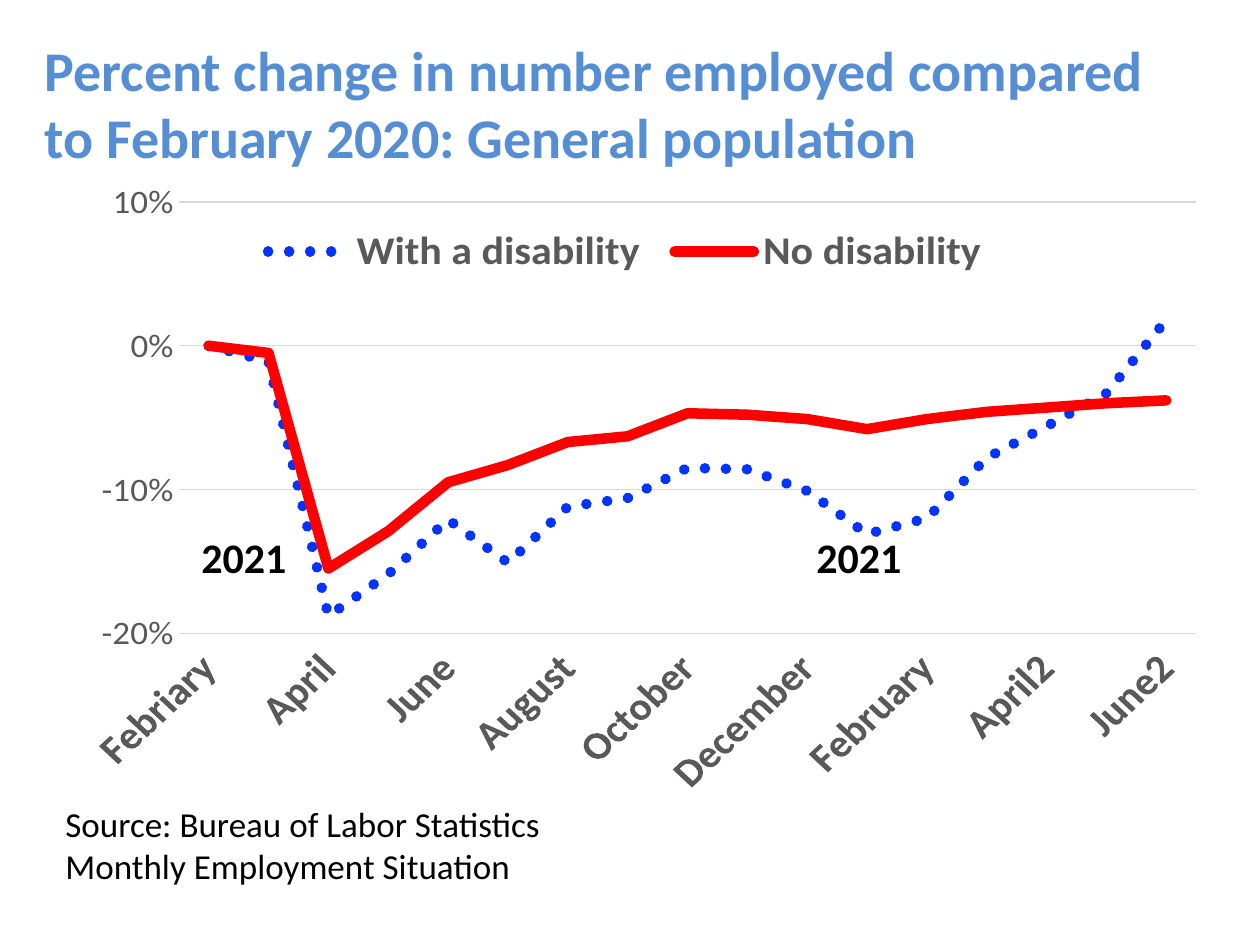
import pptx
import pptx.util
import pptx.dml.color
import pptx.chart.data
import pptx.enum.chart
import pptx.enum.dml
import pptx.enum.text
import pptx.oxml

# Content: lengths in px, text sizes in points
COLORS = {"title": "558ED5", "text": "000000", "label": "595959", "grid": "D9D9D9",
          "disability": "0432FF", "none": "FF0000"}
TEXTS = [
    {"lines": ["Percent change in number employed compared to February 2020: General population"],
     "at": (32, 32, 1166, 141), "anchor": "MIDDLE", "size": 32, "bold": True, "color": "title"},
    {"lines": ["Source: Bureau of Labor Statistics", "Monthly Employment Situation"],
     "at": (53, 796, 892, 97), "anchor": "TOP", "size": 20, "bold": False, "color": "text"},
] + [
    {"lines": ["2021"], "at": (left, 525, 136, 63), "anchor": "TOP",
     "size": 24, "bold": True, "color": "text"}
    for left in (804, 189)
]
MONTHS = ["Febriary", "March", "April", "May", "June", "July", "August", "September",
          "October", "November", "December", "January", "February", "March2", "April2",
          "May2", "June2"]
SERIES = [
    ("With a disability", "disability", "ROUND_DOT",
     [0, -0.011, -0.188, -0.159, -0.121, -0.151, -0.112, -0.106, -0.085, -0.086,
      -0.101, -0.131, -0.12, -0.078, -0.056, -0.033, 0.018]),
    ("No disability", "none", None,
     [0, -0.005, -0.155, -0.129, -0.095, -0.083, -0.067, -0.063, -0.047, -0.048,
      -0.051, -0.058, -0.051, -0.046, -0.043, -0.04, -0.038]),
]
CHART_AT = (53, 173, 1144, 624)
PLOT_AREA = (0.11, 0.05, 0.89, 0.74)  # shares of the chart
LEGEND_AREA = (0.17, 0.09, 0.66, 0.09)
FONT = "Calibri"


def px(length):
    return pptx.util.Emu(length * 914400 // 126)


def rgb(name):
    return pptx.dml.color.RGBColor.from_string(COLORS[name])


def set_font(font, size, bold, color):
    values = {"name": FONT, "size": pptx.util.Pt(size), "bold": bold}
    for key, value in values.items():
        setattr(font, key, value)
    font.color.rgb = rgb(color)


def set_line(line, color, width):
    line.color.rgb = rgb(color)
    line.width = pptx.util.Pt(width)


def chart_xml(body):
    uri = "http://schemas.openxmlformats.org/drawingml/2006/chart"
    return pptx.oxml.parse_xml(body.replace(">", f' xmlns:c="{uri}">', 1))


def manual_layout(area, inner=False):
    parts = '<c:layoutTarget val="inner"/>' if inner else ""
    parts += '<c:xMode val="edge"/><c:yMode val="edge"/>'
    parts += "".join(f'<c:{key} val="{share}"/>' for key, share in zip("xywh", area))
    return chart_xml(f"<c:layout><c:manualLayout>{parts}</c:manualLayout></c:layout>")


def drop_layout(parent):
    for layout in parent.xpath("./c:layout"):
        parent.remove(layout)


def add_text(page, item):
    box = page.shapes.add_textbox(*map(px, item["at"]))
    frame = box.text_frame
    frame.word_wrap = True
    frame.vertical_anchor = getattr(pptx.enum.text.MSO_ANCHOR, item["anchor"])
    para = frame.paragraphs[0]
    for number, line in enumerate(item["lines"]):
        if number:
            para.add_line_break()
        span = para.add_run()
        span.text = line
        set_font(span.font, item["size"], item["bold"], item["color"])


def add_employment_chart(page):
    data = pptx.chart.data.CategoryChartData(number_format="0.0%")
    data.categories = MONTHS
    for name, _, _, values in SERIES:
        data.add_series(name, values)
    kinds = pptx.enum.chart
    chart = page.shapes.add_chart(kinds.XL_CHART_TYPE.LINE, *map(px, CHART_AT), data).chart
    set_font(chart.font, 10, False, "text")
    chart.has_title = False
    chart.plots[0].vary_by_categories = False

    # Lines
    for series, (_, color, dash, _) in zip(chart.plots[0].series, SERIES):
        series.smooth = False
        series.marker.style = kinds.XL_MARKER_STYLE.NONE
        line = series.format.line
        set_line(line, color, 6)
        if dash:
            line.dash_style = getattr(pptx.enum.dml.MSO_LINE, dash)
        series._element.xpath("./c:spPr/a:ln")[0].set("cap", "rnd")

    # Axes
    months, percent = chart.category_axis, chart.value_axis
    for axis, size, bold in ((months, 24, True), (percent, 20, False)):
        axis.major_tick_mark = axis.minor_tick_mark = kinds.XL_TICK_MARK.NONE
        set_font(axis.tick_labels.font, size, bold, "label")
    months.has_major_gridlines = False
    months.tick_label_position = kinds.XL_TICK_LABEL_POSITION.LOW
    set_line(months.format.line, "grid", 0.75)
    months._element.xpath("./c:txPr/a:bodyPr")[0].set("rot", "-2700000")
    months._element.xpath("./c:noMultiLvlLbl")[0].addprevious(
        chart_xml('<c:tickLblSkip val="2"></c:tickLblSkip>'))
    limits = {"minimum_scale": -0.2, "maximum_scale": 0.1, "major_unit": 0.1}
    for key, value in limits.items():
        setattr(percent, key, value)
    percent.tick_labels.number_format = "0%"
    percent.tick_labels.number_format_is_linked = False
    percent.format.line.fill.background()
    set_line(percent.major_gridlines.format.line, "grid", 0.75)

    # Legend and plot placement
    chart.has_legend = True
    legend = chart.legend
    legend.position = kinds.XL_LEGEND_POSITION.BOTTOM
    legend.include_in_layout = False
    set_font(legend.font, 24, True, "label")
    drop_layout(legend._element)
    legend._element.xpath("./c:legendPos")[0].addnext(manual_layout(LEGEND_AREA))
    plot_area = chart._chartSpace.xpath("./c:chart/c:plotArea")[0]
    drop_layout(plot_area)
    plot_area.insert(0, manual_layout(PLOT_AREA, inner=True))


def main():
    deck = pptx.Presentation()
    deck.slide_width, deck.slide_height = px(1260), px(945)
    page = deck.slides.add_slide(deck.slide_layouts[6])
    add_employment_chart(page)
    for item in TEXTS:
        add_text(page, item)
    deck.save("out.pptx")


if __name__ == "__main__":
    main()
